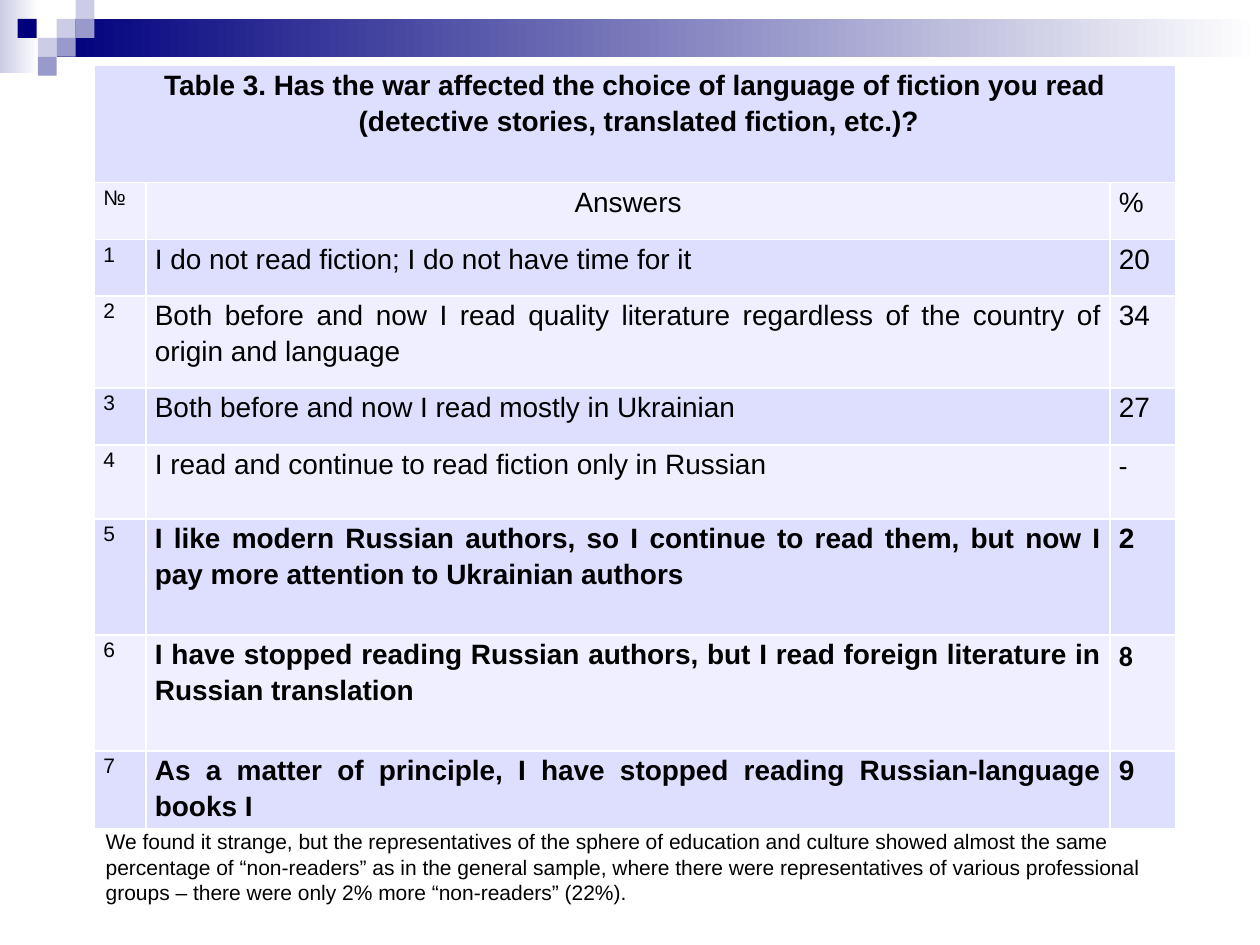
from dataclasses import dataclass

from lxml.etree import SubElement
from pptx import Presentation
from pptx.dml.color import RGBColor
from pptx.enum.shapes import MSO_SHAPE
from pptx.enum.text import PP_ALIGN
from pptx.oxml.ns import qn
from pptx.util import Inches, Pt


@dataclass(frozen=True)
class Theme:
    navy: str = "00007D"
    violet: str = "9999CC"
    lavender: str = "CCCCE6"
    white: str = "FFFFFF"
    black: str = "000000"
    bands: tuple = ("DEDEFF", "EFEFFF")
    font: str = "Arial"
    alternate_font: str = "Calibri"
    body_size: int = 16
    small_size: int = 12
    border_width: int = 1


theme = Theme()


def write_paragraph(paragraph, text, size, bold=False, font=theme.font, **layout):
    for name, value in layout.items():
        setattr(paragraph, name, value)
    run = paragraph.add_run()
    run.text = text
    for name, value in {"size": Pt(size), "bold": bold, "name": font}.items():
        setattr(run.font, name, value)
    run.font.color.rgb = RGBColor.from_string(theme.black)


def format_cell(cell, color):
    cell.fill.solid()
    cell.fill.fore_color.rgb = RGBColor.from_string(color)
    margins = {
        "margin_left": Inches(0.07),
        "margin_right": Inches(0.07),
        "margin_top": 0,
        "margin_bottom": 0,
    }
    for name, value in margins.items():
        setattr(cell, name, value)
    properties = cell._tc.get_or_add_tcPr()
    for position, side in enumerate(("lnL", "lnR", "lnT", "lnB")):
        line = SubElement(properties, qn(f"a:{side}"), w=str(Pt(theme.border_width)))
        fill = SubElement(line, qn("a:solidFill"))
        SubElement(fill, qn("a:srgbClr"), val=theme.white)
        properties.insert(position, line)


presentation = Presentation()
presentation.slide_width = Inches(10)
presentation.slide_height = Inches(7.5)
slide = presentation.slides.add_slide(presentation.slide_layouts[6])

square = 0.15
decorations = [
    (0, 0, 0.31, 0.58, (theme.lavender, theme.white)),
    (0.45, 0.15, 9.55, 0.3, (theme.navy, theme.white)),
    (0.45, 0.15, square, square, (theme.lavender,)),
    (0.6, 0, square, square, (theme.lavender,)),
    (0.6, 0.15, square, square, (theme.violet,)),
    (0.3, 0.3, square, square, (theme.lavender,)),
    (0.14, 0.15, square, square, (theme.navy,)),
    (0.45, 0.3, square, square, (theme.violet,)),
    (0.3, 0.45, square, square, (theme.violet,)),
]
for left, top, width, height, colors in decorations:
    shape = slide.shapes.add_shape(
        MSO_SHAPE.RECTANGLE, Inches(left), Inches(top), Inches(width), Inches(height)
    )
    shape.shadow.inherit = False
    shape.line.fill.background()
    if len(colors) == 1:
        shape.fill.solid()
        shape.fill.fore_color.rgb = RGBColor.from_string(colors[0])
    else:
        shape.fill.gradient()
        shape.fill.gradient_angle = 0
        for stop, color in zip(shape.fill.gradient_stops, colors):
            stop.color.rgb = RGBColor.from_string(color)

title_lines = [
    "Table 3. Has the war affected the choice of language of fiction you read",
    " (detective stories, translated fiction, etc.)?",
]
answers = [
    ("№", "Answers", "%"),
    ("1", "I do not read fiction; I do not have time for it", "20"),
    ("2", "Both before and now I read quality literature regardless of the country of "
     "origin and language", "34"),
    ("3", "Both before and now I read mostly in Ukrainian", "27"),
    ("4", "I read and continue to read fiction only in Russian", "-"),
    ("5", "I like modern Russian authors, so I continue to read them, but now I pay "
     "more attention to Ukrainian authors", "2"),
    ("6", "I have stopped reading Russian authors, but I read foreign literature in "
     "Russian translation", "8"),
    ("7", "As a matter of principle, I have stopped reading Russian-language books I", "9"),
]
column_widths = [0.41, 7.65, 0.52]
row_heights = [0.93, 0.45, 0.45, 0.73, 0.45, 0.59, 0.92, 0.92, 0.62]
first_bold_row = 6
alternate_font_values = ("-", "8")

table = slide.shapes.add_table(
    len(row_heights), len(column_widths),
    Inches(0.75), Inches(0.52), Inches(8.58), Inches(6.04),
).table
table.first_row = False
table.horz_banding = False
for column, width in zip(table.columns, column_widths):
    column.width = Inches(width)
for row_index, (row, height) in enumerate(zip(table.rows, row_heights)):
    row.height = Inches(height)
    for cell in row.cells:
        format_cell(cell, theme.bands[row_index % 2])

title_cell = table.cell(0, 0)
title_cell.merge(table.cell(0, 2))
title_frame = title_cell.text_frame
title_frame.add_paragraph()
for paragraph, text in zip(title_frame.paragraphs, title_lines):
    write_paragraph(paragraph, text, theme.body_size, bold=True,
                    alignment=PP_ALIGN.CENTER, line_spacing=1.15)

for row_index, values in enumerate(answers, start=1):
    for column_index, text in enumerate(values):
        is_number = column_index == 0
        is_heading = row_index == 1 and column_index == 1
        is_alternate = column_index == 2 and text in alternate_font_values
        write_paragraph(
            table.cell(row_index, column_index).text_frame.paragraphs[0],
            text,
            theme.small_size if is_number else theme.body_size,
            bold=row_index >= first_bold_row and not is_number,
            font=theme.alternate_font if is_alternate else theme.font,
            alignment=PP_ALIGN.CENTER if is_heading else PP_ALIGN.JUSTIFY,
            line_spacing=1.15,
        )

note = slide.shapes.add_textbox(Inches(0.74), Inches(6.53), Inches(8.58), Inches(0.71))
note.text_frame.word_wrap = True
write_paragraph(
    note.text_frame.paragraphs[0],
    "We found it strange, but the representatives of the sphere of education and culture "
    "showed almost the same percentage of “non-readers” as in the general sample, where "
    "there were representatives of various professional groups – there were only 2% more "
    "“non-readers” (22%).",
    theme.small_size,
)

presentation.save("out.pptx")
